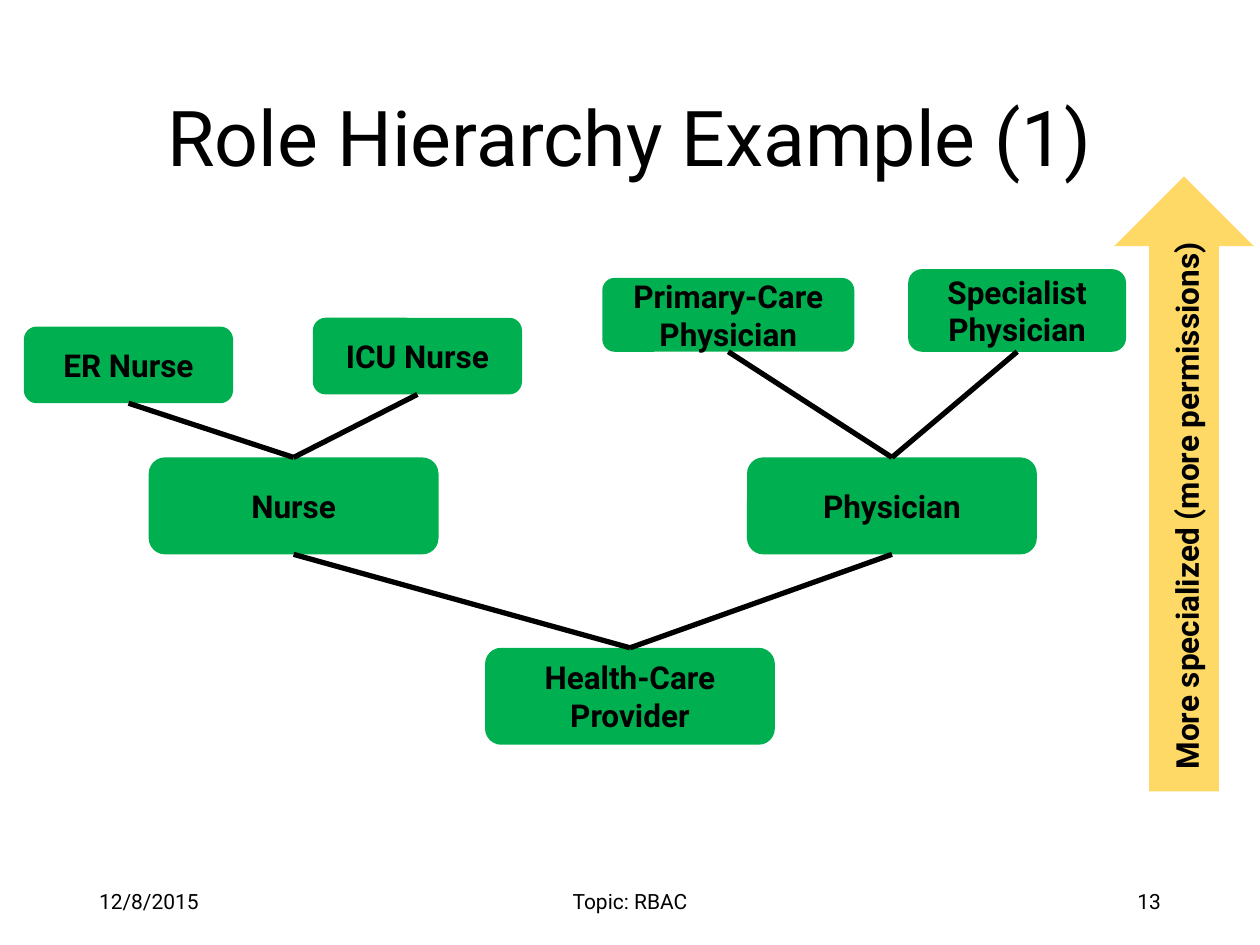
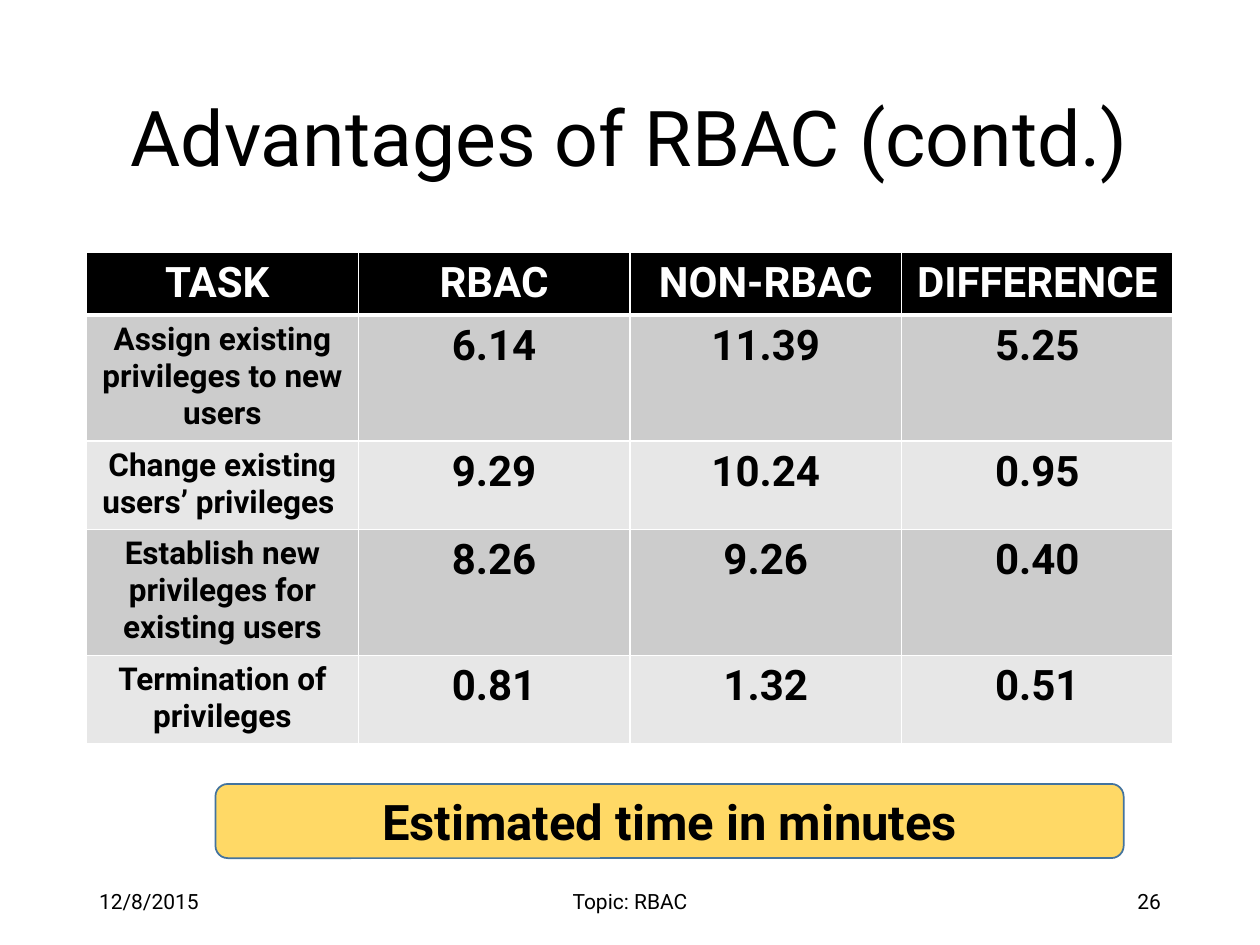
import pptx
import pptx.dml.color
import pptx.enum.shapes
import pptx.enum.text
import pptx.oxml.ns
import pptx.util
from lxml import etree

Pt = pptx.util.Pt
Align = pptx.enum.text.PP_ALIGN
Anchor = pptx.enum.text.MSO_ANCHOR
Shape = pptx.enum.shapes.MSO_SHAPE
qn = pptx.oxml.ns.qn

FONT = "Roboto"
BLACK = "000000"
WHITE = "FFFFFF"
GREEN = "00B050"
YELLOW = "FFD966"
BLUE = "43739E"
BAND_FILLS = ["CCCCCC", "E7E7E7"]
TITLE_ONLY = 5
TOP_SITE, BOTTOM_SITE = 0, 2
MARGIN, CONTENT_WIDTH = 49.5, 621

ROLES = {
    "Health-Care Provider": (277.2, 370.2, 165.6, 55.4),
    "Nurse": (85, 261.4, 165.6, 55.4),
    "Physician": (426.9, 261.4, 165.6, 55.4),
    "Primary-Care Physician": (344.2, 158.8, 144, 42.2),
    "Specialist Physician": (519, 153.8, 124.5, 47.2),
    "ER Nurse": (13.7, 186.6, 119.5, 43.8),
    "ICU Nurse": (178.8, 181.6, 119.5, 43.8),
}
HIERARCHY = {
    "Health-Care Provider": ["Physician", "Nurse"],
    "Physician": ["Primary-Care Physician", "Specialist Physician"],
    "Nurse": ["ICU Nurse", "ER Nurse"],
}
TASK_TIMES = [
    ["TASK ", "RBAC", "NON-RBAC", "DIFFERENCE"],
    ["Assign existing privileges to new users", "6.14", "11.39", "5.25"],
    ["Change existing users’ privileges ", "9.29", "10.24", "0.95"],
    ["Establish new privileges for existing users", "8.26", "9.26", "0.40"],
    ["Termination of privileges", "0.81", "1.32", "0.51"],
]
ROW_HEIGHTS = [35, 70.5, 49, 70.5, 49]


def color(hex_string):
    return pptx.dml.color.RGBColor.from_string(hex_string)


def paint(item, hex_string):
    item.fill.solid()
    item.fill.fore_color.rgb = color(hex_string)


def write(frame, text, size, bold=False, align=Align.CENTER, text_color=BLACK):
    para = frame.paragraphs[0]
    para.alignment = align
    span = para.add_run()
    span.text = text
    span.font.name = FONT
    span.font.size = Pt(size)
    span.font.bold = bold
    span.font.color.rgb = color(text_color)
    return para


def add_text(page, bounds, text, size, bold=False, align=Align.LEFT, anchor=Anchor.MIDDLE):
    box = page.shapes.add_textbox(*map(Pt, bounds))
    box.text_frame.word_wrap = True
    box.text_frame.vertical_anchor = anchor
    write(box.text_frame, text, size, bold, align)
    return box


def add_block(page, kind, bounds, fill, line=None):
    block = page.shapes.add_shape(kind, *map(Pt, bounds))
    block.shadow.inherit = False
    paint(block, fill)
    if line:
        block.line.color.rgb = color(line)
        block.line.width = Pt(1)
    else:
        block.line.fill.background()
    return block


def add_label_block(page, bounds, text, size, fill, line=None):
    block = add_block(page, Shape.ROUNDED_RECTANGLE, bounds, fill, line)
    block.text_frame.vertical_anchor = Anchor.MIDDLE
    write(block.text_frame, text, size, bold=True)
    return block


def link(page, parent, child):
    connector = page.shapes.add_connector(pptx.enum.shapes.MSO_CONNECTOR.STRAIGHT, 0, 0, 0, 0)
    connector.begin_connect(parent, TOP_SITE)
    connector.end_connect(child, BOTTOM_SITE)
    connector.line.color.rgb = color(BLACK)
    connector.line.width = Pt(3)
    etree.SubElement(connector._element.spPr, qn("a:effectLst"))


def add_border(cell, side, width):
    properties = cell._tc.get_or_add_tcPr()
    border = etree.SubElement(properties, qn(f"a:ln{side}"), w=str(Pt(width)))
    fill = etree.SubElement(border, qn("a:solidFill"))
    etree.SubElement(fill, qn("a:srgbClr"), val=WHITE)


def add_times_table(page, rows):
    columns = len(rows[0])
    bounds = (MARGIN, 144, CONTENT_WIDTH, sum(ROW_HEIGHTS))
    table = page.shapes.add_table(len(rows), columns, *map(Pt, bounds)).table
    for row_index, values in enumerate(rows):
        table.rows[row_index].height = Pt(ROW_HEIGHTS[row_index])
        is_header = row_index == 0
        fill = BLACK if is_header else BAND_FILLS[(row_index - 1) % 2]
        for column_index, value in enumerate(values):
            cell = table.cell(row_index, column_index)
            for side in "LRTB":
                meets_header = (row_index, side) in [(0, "B"), (1, "T")]
                add_border(cell, side, 3 if meets_header else 1)
            paint(cell, fill)
            size = 18 if column_index == 0 and not is_header else 24
            write(cell.text_frame, value, size, bold=True,
                  text_color=WHITE if is_header else BLACK)


def add_page(deck, title, number):
    page = deck.slides.add_slide(deck.slide_layouts[TITLE_ONLY])
    heading = page.shapes.title
    heading.left, heading.top, heading.width, heading.height = map(
        Pt, (MARGIN, 28.8, CONTENT_WIDTH, 104.4))
    heading.text_frame.auto_size = pptx.enum.text.MSO_AUTO_SIZE.NONE
    heading.text_frame.vertical_anchor = Anchor.MIDDLE
    write(heading.text_frame, title, 44).line_spacing = 0.9
    footers = [
        (MARGIN, 162, "12/8/2015", Align.LEFT),
        (238.5, 243, "Topic: RBAC", Align.CENTER),
        (508.5, 162, str(number), Align.RIGHT),
    ]
    for left, width, text, align in footers:
        add_text(page, (left, 500.5, width, 28.8), text, 12, align=align)
    return page


def add_hierarchy_page(deck):
    page = add_page(deck, "Role Hierarchy Example (1)", 13)
    boxes = {role: add_label_block(page, bounds, role, 18, GREEN)
             for role, bounds in ROLES.items()}
    for parent, children in HIERARCHY.items():
        for child in children:
            link(page, boxes[parent], boxes[child])
    add_block(page, Shape.UP_ARROW, (636.8, 100.8, 79.6, 351.4), YELLOW)
    caption = add_text(page, (518.4, 272.9, 319, 28.8), "More specialized (more permissions)",
                       18, bold=True, anchor=Anchor.TOP)
    caption.rotation = 270


def add_advantages_page(deck):
    page = add_page(deck, "Advantages of RBAC (contd.)", 26)
    add_times_table(page, TASK_TIMES)
    add_label_block(page, (123.1, 448, 519, 42.4), "Estimated time in minutes", 28, YELLOW, BLUE)


def main():
    deck = pptx.Presentation()
    deck.slide_width, deck.slide_height = Pt(720), Pt(540)
    add_hierarchy_page(deck)
    add_advantages_page(deck)
    deck.save("out.pptx")


if __name__ == "__main__":
    main()
